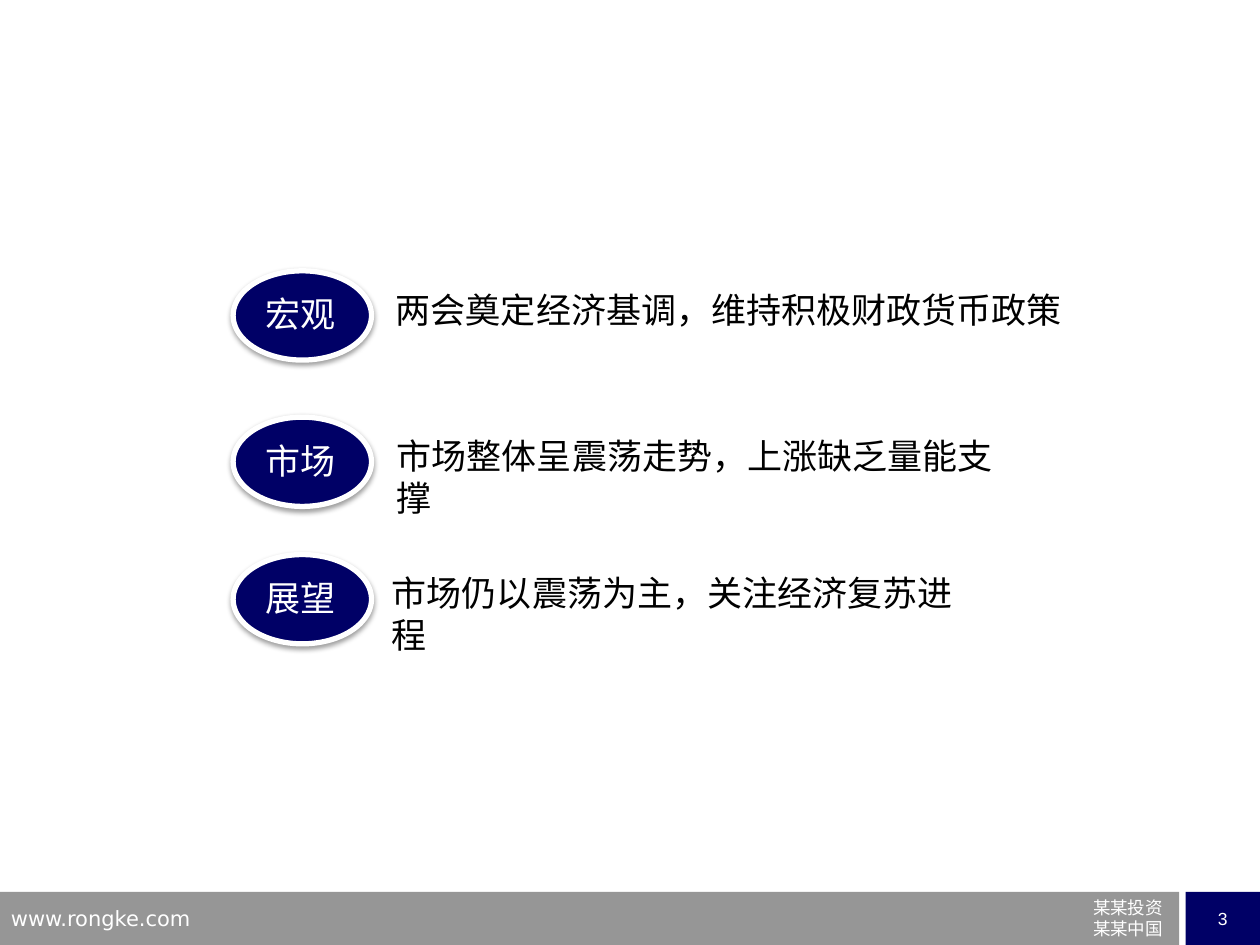
from lxml import etree
from pptx import Presentation
from pptx.dml.color import RGBColor
from pptx.enum.shapes import MSO_SHAPE as SHAPE
from pptx.enum.text import MSO_ANCHOR as ANCHOR, PP_ALIGN as ALIGN
from pptx.oxml import parse_xml
from pptx.oxml.ns import nsdecls, qn
from pptx.util import Cm, Pt

NAVY = RGBColor(0x00, 0x00, 0x66)
GRAY = RGBColor(0x96, 0x96, 0x96)
WHITE = RGBColor(0xFF, 0xFF, 0xFF)
BLACK = RGBColor(0x00, 0x00, 0x00)
CJK, SANS = "Noto Sans CJK SC", "DejaVu Sans"

# Content: label, statement, oval top, statement left and width (cm)
TOPICS = [
    ("宏观", "两会奠定经济基调，维持积极财政货币政策", 5.46, 7.98, 13.67),
    ("市场", "市场整体呈震荡走势，上涨缺乏量能支撑", 8.41, 8.0, 12.7),
    ("展望", "市场仍以震荡为主，关注经济复苏进程", 11.18, 7.9, 11.99),
]
WEBSITE = "www.rongke.com"
COMPANY = ["某某投资", "某某中国"]
PAGE = "3"

OVAL_LEFT, OVAL_W, OVAL_H = 4.7, 2.79, 1.8
FOOTER_TOP, FOOTER_H = 17.98, 1.07

SHADOW = (
    f'<a:effectLst {nsdecls("a")}>'
    '<a:outerShdw blurRad="39400" dist="20300" dir="5400000" rotWithShape="0">'
    '<a:srgbClr val="000000"><a:alpha val="38000"/></a:srgbClr>'
    '</a:outerShdw></a:effectLst>'
)

prs = Presentation()
prs.slide_width, prs.slide_height = Cm(25.4), Cm(19.05)
slide = prs.slides.add_slide(prs.slide_layouts[6])


def write(s, *lines, size=20, font=CJK, color=BLACK, align=ALIGN.LEFT,
          anchor=ANCHOR.TOP, inset=None, wrap=True):
    tf = s.text_frame
    tf.word_wrap, tf.vertical_anchor = wrap, anchor
    if inset is not None:
        tf.margin_left = tf.margin_right = Cm(inset)
        tf.margin_top = tf.margin_bottom = Cm(inset)
    for i, line in enumerate(lines):
        p = tf.add_paragraph() if i else tf.paragraphs[0]
        p.alignment = align
        r = p.add_run()
        r.text = line
        r.font.size = Pt(size)
        r.font.color.rgb = color
        r.font.name = font
        ea = etree.SubElement(r.font._element, qn("a:ea"))
        ea.set("typeface", font)


def add_text(left, top, width, height, *lines, **fmt):
    s = slide.shapes.add_textbox(Cm(left), Cm(top), Cm(width), Cm(height))
    write(s, *lines, **fmt)


def add_block(kind, left, top, width, height, fill):
    s = slide.shapes.add_shape(kind, Cm(left), Cm(top), Cm(width), Cm(height))
    s.shadow.inherit = False
    s.fill.solid()
    s.fill.fore_color.rgb = fill
    s.line.fill.background()
    return s


# Footer
add_block(SHAPE.RECTANGLE, 0, FOOTER_TOP, 23.77, FOOTER_H, GRAY)
add_text(-0.03, 18.14, 6.12, 0.66, WEBSITE, size=12, font=SANS, color=WHITE)
add_text(20.85, 17.96, 2.84, 1.14, *COMPANY, size=10, font=SANS, color=WHITE,
         align=ALIGN.RIGHT)
page = add_block(SHAPE.RECTANGLE, 23.9, FOOTER_TOP, 1.5, FOOTER_H, NAVY)
write(page, PAGE, size=10, font="Arial", color=WHITE, align=ALIGN.CENTER,
      anchor=ANCHOR.MIDDLE, wrap=False)

# Topics: labelled oval with its statement
for label, statement, top, left, width in TOPICS:
    oval = add_block(SHAPE.OVAL, OVAL_LEFT, top, OVAL_W, OVAL_H, NAVY)
    oval.line.color.rgb = WHITE
    oval.line.width = Pt(3)
    props = oval._element.spPr
    props.remove(props.find(qn("a:effectLst")))
    props.append(parse_xml(SHADOW))
    add_text(OVAL_LEFT + 0.4, top + 0.32, 2.01, 1.12, label, color=WHITE)
    add_text(left, top + 0.35, width, 0.86, statement, inset=0)

prs.save("out.pptx")
